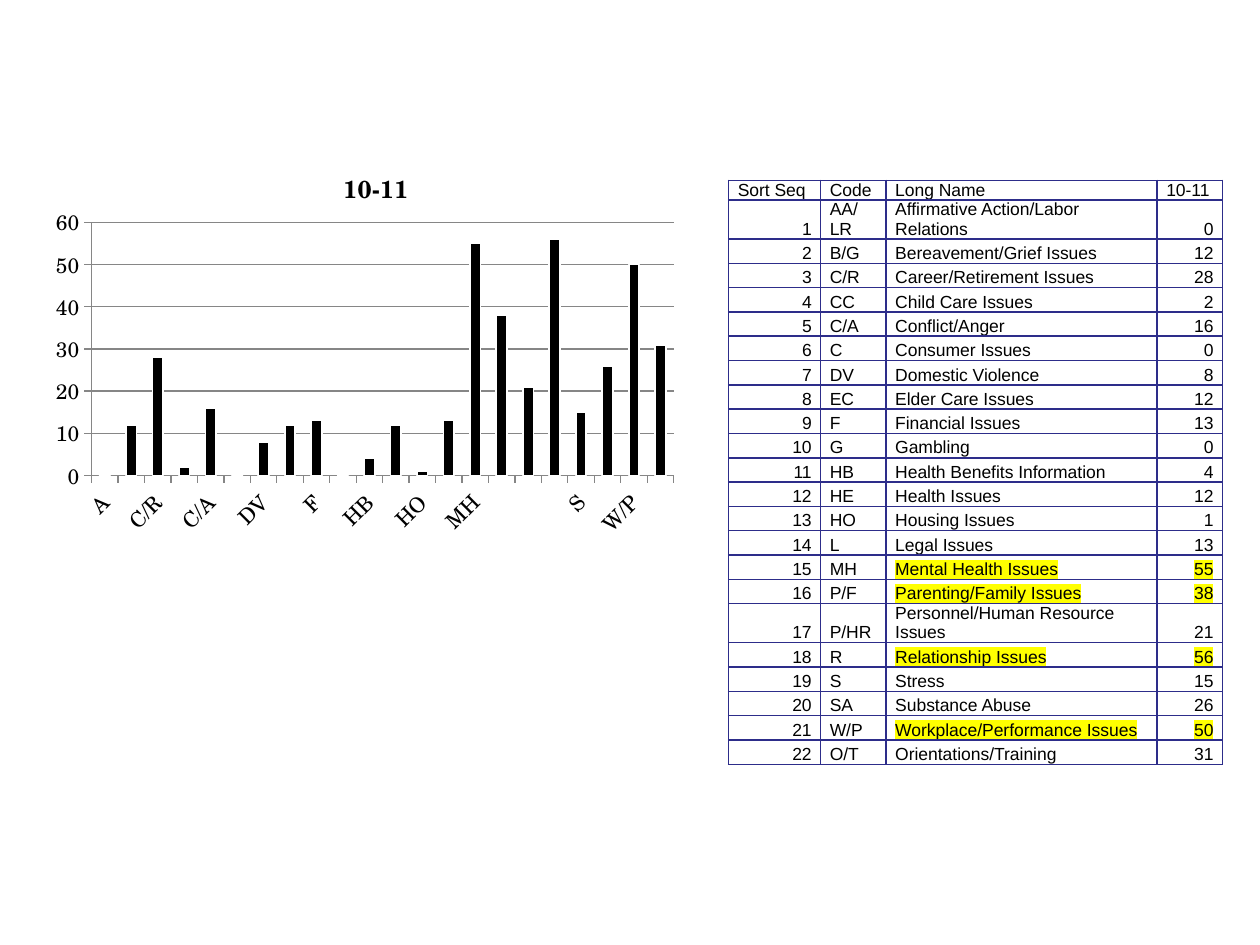
from dataclasses import dataclass

from lxml import etree
from pptx import Presentation
from pptx import util as u
from pptx.chart import data as chart_data
from pptx.dml.color import RGBColor
from pptx.enum import chart as chart_enum, text
from pptx.oxml import parse_xml
from pptx.oxml.ns import nsdecls, qn

Pt = u.Pt


@dataclass
class Theme:
    ink: RGBColor = RGBColor(0, 0, 0)
    paper: RGBColor = RGBColor(255, 255, 255)
    grid: RGBColor = RGBColor(0x86, 0x86, 0x86)
    border: str = "2D2D8A"
    marker: str = "FFFF00"
    chart_font: str = "TeX Gyre Schola"
    table_font: str = "Arial"
    title_size: int = 14
    axis_size: int = 12
    table_size: int = 10


theme = Theme()
period = "10-11"
issues = [
    ("AA/LR", "Affirmative Action/Labor Relations", 0),
    ("B/G", "Bereavement/Grief Issues", 12),
    ("C/R", "Career/Retirement Issues", 28),
    ("CC", "Child Care Issues", 2),
    ("C/A", "Conflict/Anger", 16),
    ("C", "Consumer Issues", 0),
    ("DV", "Domestic Violence", 8),
    ("EC", "Elder Care Issues", 12),
    ("F", "Financial Issues", 13),
    ("G", "Gambling", 0),
    ("HB", "Health Benefits Information", 4),
    ("HE", "Health Issues", 12),
    ("HO", "Housing Issues", 1),
    ("L", "Legal Issues", 13),
    ("MH", "Mental Health Issues", 55),
    ("P/F", "Parenting/Family Issues", 38),
    ("P/HR", "Personnel/Human Resource Issues", 21),
    ("R", "Relationship Issues", 56),
    ("S", "Stress", 15),
    ("SA", "Substance Abuse", 26),
    ("W/P", "Workplace/Performance Issues", 50),
    ("O/T", "Orientations/Training", 31),
]
highlighted_codes = {"MH", "P/F", "R", "W/P"}


def set_font(font, name, size, bold=False):
    font.name, font.size, font.bold = name, Pt(size), bold
    font.color.rgb = theme.ink


def add_borders(cell):
    for side in ("lnL", "lnR", "lnT", "lnB"):
        cell._tc.get_or_add_tcPr().append(parse_xml(
            f'<a:{side} {nsdecls("a")} w="{Pt(1)}"><a:solidFill>'
            f'<a:srgbClr val="{theme.border}"/></a:solidFill></a:{side}>'))


deck = Presentation()
deck.slide_width, deck.slide_height = Pt(720), Pt(540)
page = deck.slides.add_slide(deck.slide_layouts[6])

# Column chart of issue counts
counts = chart_data.CategoryChartData()
counts.categories = [code for code, _, _ in issues]
counts.add_series(period, [count for _, _, count in issues])
chart = page.shapes.add_chart(
    chart_enum.XL_CHART_TYPE.COLUMN_CLUSTERED,
    Pt(25.9), Pt(84.2), Pt(378), Pt(226), counts).chart
set_font(chart.font, theme.chart_font, theme.axis_size)
chart.has_legend = False
chart.has_title = True
title = chart.chart_title.text_frame.paragraphs[0]
title.add_run().text = period
set_font(title.font, theme.chart_font, theme.title_size, True)

plot = chart.plots[0]
plot.gap_width = 150
plot.vary_by_categories = False
bars = plot.series[0].format
bars.fill.solid()
bars.fill.fore_color.rgb = theme.ink
bars.line.color.rgb = theme.paper
bars.line.width = Pt(1)

# Axes and gridlines
counts_axis, codes_axis = chart.value_axis, chart.category_axis
counts_axis.minimum_scale, counts_axis.maximum_scale = 0, 60
counts_axis.major_unit = 10
counts_axis.has_major_gridlines = True
for line in (counts_axis.major_gridlines.format.line,
             counts_axis.format.line, codes_axis.format.line):
    line.color.rgb = theme.grid
    line.width = Pt(0.75)
for axis in (counts_axis, codes_axis):
    axis.major_tick_mark = chart_enum.XL_TICK_MARK.OUTSIDE
    set_font(axis.tick_labels.font, theme.chart_font, theme.axis_size)
codes_axis.tick_labels.font._element.getparent().getparent().getparent().find(
    qn("a:bodyPr")).set("rot", str(-45 * 60000))

# Fixed inner plot area
plot_area = chart._chartSpace.chart.plotArea
for old_layout in plot_area.findall(qn("c:layout")):
    plot_area.remove(old_layout)
layout = etree.Element(qn("c:layout"))
manual = etree.SubElement(layout, qn("c:manualLayout"))
for tag, value in (("layoutTarget", "inner"), ("xMode", "edge"), ("yMode", "edge"),
                   ("x", 0.07), ("y", 0.19), ("w", 0.88), ("h", 0.64)):
    etree.SubElement(manual, qn(f"c:{tag}")).set("val", str(value))
plot_area.insert(0, layout)

# Table of issues
rows = [("Sort Seq", "Code", "Long Name", period)]
rows += [(number, *issue) for number, issue in enumerate(issues, 1)]
table = page.shapes.add_table(
    len(rows), 4, Pt(416.4), Pt(103), Pt(282.3), Pt(318)).table
table.first_row = table.horz_banding = False
for column, width in zip(table.columns, (52.6, 37.4, 154.9, 37.4)):
    column.width = Pt(width)

for row_index, values in enumerate(rows):
    table.rows[row_index].height = Pt(13.9 if row_index else 10.1)
    for column_index, value in enumerate(values):
        cell = table.cell(row_index, column_index)
        add_borders(cell)
        cell.fill.background()
        cell.margin_left = cell.margin_right = Pt(5.2)
        cell.margin_top = cell.margin_bottom = 0
        cell.vertical_anchor = text.MSO_ANCHOR.BOTTOM
        para = cell.text_frame.paragraphs[0]
        if row_index and column_index in (0, 3):
            para.alignment = text.PP_ALIGN.RIGHT
        span = para.add_run()
        span.text = str(value)
        set_font(para.font, theme.table_font, theme.table_size)
        if values[1] in highlighted_codes and column_index >= 2:
            span.font._element.append(parse_xml(
                f'<a:highlight {nsdecls("a")}><a:srgbClr val="{theme.marker}"/>'
                '</a:highlight>'))

deck.save("out.pptx")
